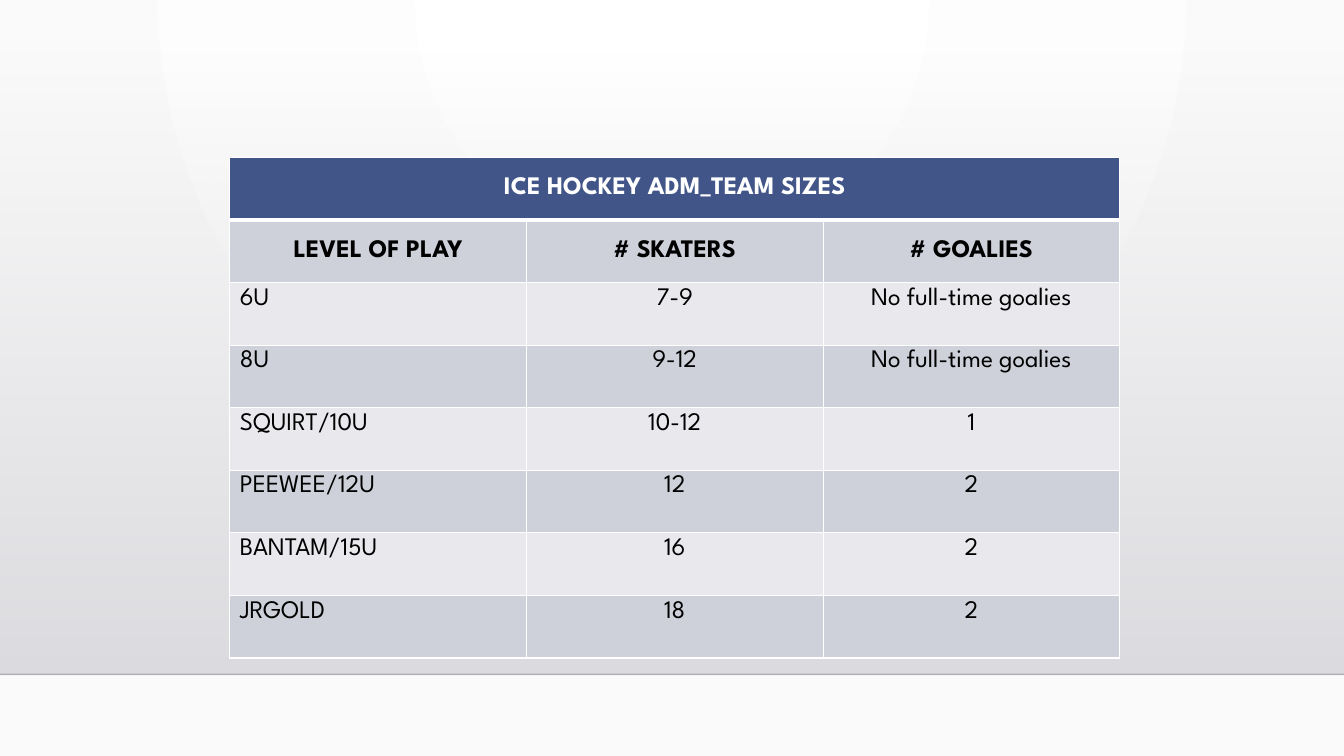
from lxml import etree
from pptx import Presentation
from pptx.dml.color import RGBColor
from pptx.enum.shapes import MSO_CONNECTOR, MSO_SHAPE
from pptx.enum.text import MSO_ANCHOR, PP_ALIGN
from pptx.oxml.ns import qn
from pptx.util import Pt

LEFT, CENTER = PP_ALIGN.LEFT, PP_ALIGN.CENTER
TOP, MIDDLE = MSO_ANCHOR.TOP, MSO_ANCHOR.MIDDLE
RECTANGLE, STRAIGHT = MSO_SHAPE.RECTANGLE, MSO_CONNECTOR.STRAIGHT

SLIDE_WIDTH, SLIDE_HEIGHT = 960, 540
FLOOR_TOP, FLOOR_LINE = 36.72, 481.68
TABLE_LEFT, TABLE_TOP = 164.16, 112.4
COLUMN_WIDTH, ROW_HEIGHT = 211.9, 44.72
NAVY, BAND_DARK, BAND_LIGHT = "415588", "CFD1DA", "E9E9ED"
TITLE = "ICE HOCKEY ADM_TEAM SIZES"
HEADINGS = ("LEVEL OF PLAY", "# SKATERS", "# GOALIES")
TEAMS = (
    ("6U", "7-9", "No full-time goalies"),
    ("8U", "9-12", "No full-time goalies"),
    ("SQUIRT/10U", "10-12", "1"),
    ("PEEWEE/12U", "12", "2"),
    ("BANTAM/15U", "16", "2"),
    ("JRGOLD", "18", "2"),
)


def color(value):
    """Turn a hex string into a colour."""
    return RGBColor.from_string(value)


def write(frame, text, size=18, font="League Spartan", fill="000000", bold=False, align=CENTER):
    """Put formatted text into a text frame."""
    paragraph = frame.paragraphs[0]
    paragraph.alignment = align
    run = paragraph.add_run()
    run.text = text
    run.font.size = Pt(size)
    run.font.name = font
    run.font.bold = bold
    run.font.color.rgb = color(fill)


def set_alpha(element, percent):
    """Set the opacity of the first colour inside an element."""
    first_color = next(element.iter(qn("a:srgbClr")))
    etree.SubElement(first_color, qn("a:alpha"), val=str(percent * 1000))


class SlideBuilder:
    """Hold the style and the current slide."""

    def __init__(self, presentation):
        """Add a blank slide."""
        self.slide = presentation.slides.add_slide(presentation.slide_layouts[6])
        self.border = "FFFFFF"

    def gradient(self, fill, start, end):
        """Give a fill two gradient stops."""
        fill.gradient()
        for stop, value in zip(fill.gradient_stops, (start, end)):
            stop.color.rgb = color(value)

    def background(self, start, end):
        """Fill the background with a circular gradient from the top centre."""
        self.gradient(self.slide.background.fill, start, end)
        linear = next(self.slide.element.iter(qn("a:lin")))
        circle = etree.Element(qn("a:path"), path="circle")
        etree.SubElement(circle, qn("a:fillToRect"), l="43000", t="0", r="43000", b="100000")
        linear.getparent().replace(linear, circle)

    def fading_panel(self, left, top, width, height, start, end):
        """Draw a rectangle that fades in from top to bottom."""
        shape = self.slide.shapes.add_shape(RECTANGLE, Pt(left), Pt(top), Pt(width), Pt(height))
        shape.shadow.inherit = False
        shape.line.fill.background()
        self.gradient(shape.fill, start, end)
        shape.fill.gradient_angle = 270
        set_alpha(shape.element.spPr, 0)

    def line(self, left, top, right, bottom, fill, opacity):
        """Draw a thin translucent line."""
        connector = self.slide.shapes.add_connector(STRAIGHT, Pt(left), Pt(top), Pt(right), Pt(bottom))
        connector.line.width = Pt(1)
        connector.line.color.rgb = color(fill)
        properties = connector.element.spPr
        set_alpha(properties, opacity)
        etree.SubElement(properties, qn("a:effectLst"))

    def cell_borders(self, cell, top, bottom):
        """Draw the four borders of a cell."""
        properties = cell._tc.get_or_add_tcPr()
        for index, (side, width) in enumerate(zip("LRTB", (1, 1, top, bottom))):
            border = etree.Element(qn(f"a:ln{side}"), w=str(Pt(width)))
            solid = etree.SubElement(border, qn("a:solidFill"))
            etree.SubElement(solid, qn("a:srgbClr"), val=self.border)
            properties.insert(index, border)

    def table(self, left, top, column_width, row_height, rows):
        """Add a table with a merged title row, a heading row and banded rows."""
        columns = len(rows[-1])
        frame = self.slide.shapes.add_table(
            len(rows), columns, Pt(left), Pt(top),
            Pt(column_width * columns), Pt(row_height * len(rows)))
        table = frame.table
        for column in table.columns:
            column.width = Pt(column_width)
        for row_index, texts in enumerate(rows):
            table.rows[row_index].height = Pt(row_height)
            is_title, is_heading = row_index == 0, row_index <= 1
            band = NAVY if is_title else (BAND_DARK if row_index % 2 else BAND_LIGHT)
            for column_index in range(columns):
                cell = table.cell(row_index, column_index)
                cell.fill.solid()
                cell.fill.fore_color.rgb = color(band)
                cell.vertical_anchor = MIDDLE if is_heading else TOP
                self.cell_borders(cell, 3 if row_index == 1 else 1, 3 if is_title else 1)
            for column_index, text in enumerate(texts):
                write(table.cell(row_index, column_index).text_frame, text,
                      fill="FFFFFF" if is_title else "000000", bold=is_heading,
                      align=CENTER if is_heading or column_index else LEFT)
        table.cell(0, 0).merge(table.cell(0, columns - 1))


def main():
    """Build the team size slide."""
    presentation = Presentation()
    presentation.slide_width = Pt(SLIDE_WIDTH)
    presentation.slide_height = Pt(SLIDE_HEIGHT)
    builder = SlideBuilder(presentation)
    builder.background("FFFFFF", "FAFAFA")
    builder.fading_panel(0, FLOOR_TOP, SLIDE_WIDTH, FLOOR_LINE - FLOOR_TOP, "DCDCE0", "DEDEE2")
    builder.line(0, FLOOR_LINE, SLIDE_WIDTH, FLOOR_LINE, "000001", 20)
    builder.table(TABLE_LEFT, TABLE_TOP, COLUMN_WIDTH, ROW_HEIGHT, ((TITLE,), HEADINGS, *TEAMS))
    presentation.save("out.pptx")


if __name__ == "__main__":
    main()
